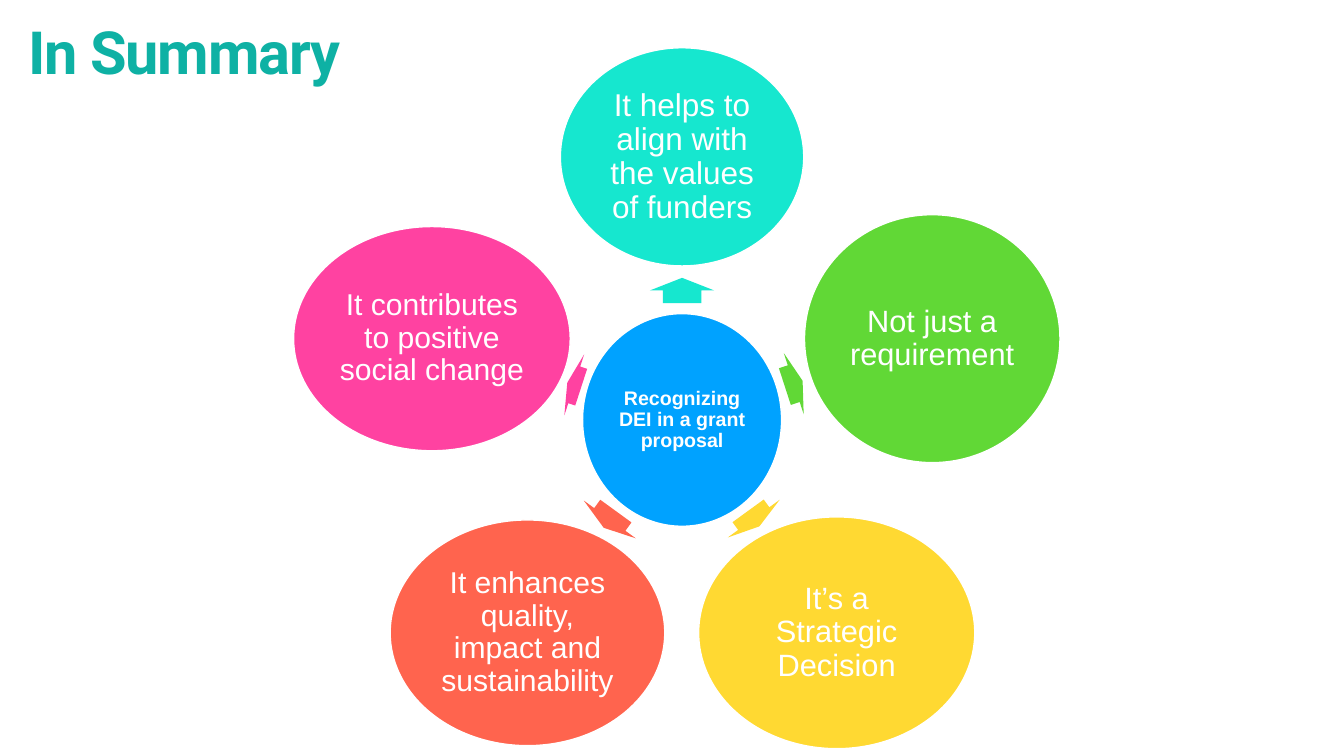
from dataclasses import dataclass
from math import cos, radians, sin

from pptx import Presentation
from pptx.dml.color import RGBColor
from pptx.enum.shapes import MSO_SHAPE
from pptx.enum.text import MSO_ANCHOR, PP_ALIGN
from pptx.util import Inches, Pt

OVAL, ARROW = MSO_SHAPE.OVAL, MSO_SHAPE.RIGHT_ARROW
TOP, MIDDLE = MSO_ANCHOR.TOP, MSO_ANCHOR.MIDDLE
LEFT, CENTER = PP_ALIGN.LEFT, PP_ALIGN.CENTER

SLIDE_WIDTH, SLIDE_HEIGHT = 26.67, 15
HUB_X, HUB_Y = 0.5075 * SLIDE_WIDTH, 0.5555 * SLIDE_HEIGHT
ORBIT = 0.348 * SLIDE_HEIGHT
ARROW_BREADTH = 0.085 * SLIDE_HEIGHT


@dataclass(frozen=True)
class Theme:
    title_font: str = "Roboto"
    body_font: str = "Arial"
    title_color: str = "0EB1A4"
    text_color: str = "FFFFFF"
    outline: str = "FFFFFF"
    hub: str = "00A2FF"
    turquoise: str = "16E7CF"
    green: str = "61D836"
    yellow: str = "FFD932"
    coral: str = "FF644E"
    pink: str = "FF42A1"
    title_size: int = 85
    hub_size: int = 28
    large: int = 45
    medium: int = 44
    small: int = 43


THEME = Theme()

# Clockwise from the top: text, color, type size, oval width and height,
# arrow length and arrow distance from the hub
REASONS = [
    ("It helps to align with the values of funders",
     THEME.turquoise, THEME.large, 4.83, 4.33, 0.5, 2.57),
    ("Not just a requirement",
     THEME.green, THEME.medium, 5.07, 4.92, 0.37, 2.33),
    ("It’s a Strategic Decision",
     THEME.yellow, THEME.medium, 5.48, 4.6, 0.38, 2.42),
    ("It enhances quality, impact and sustainability",
     THEME.coral, THEME.small, 5.45, 4.48, 0.41, 2.44),
    ("It contributes to positive social change",
     THEME.pink, THEME.small, 5.49, 4.45, 0.29, 2.25),
]


def polar(angle, distance):
    """Return the point at an angle and distance from the hub."""
    return (HUB_X + distance * cos(radians(angle)),
            HUB_Y + distance * sin(radians(angle)))


def write_text(shape, text, font, size, color, bold=False,
               align=CENTER, anchor=MIDDLE, spacing=0.9, margin=0.06):
    frame = shape.text_frame
    frame.text = text
    frame.word_wrap = True
    frame.vertical_anchor = anchor
    frame.margin_left = frame.margin_right = Inches(margin)
    frame.margin_top = frame.margin_bottom = Inches(margin)
    paragraph = frame.paragraphs[0]
    paragraph.alignment = align
    paragraph.line_spacing = spacing
    run = paragraph.runs[0]
    run.font.name = font
    run.font.size = Pt(size)
    run.font.bold = bold
    run.font.color.rgb = RGBColor.from_string(color)
    return run


def add_centered_shape(slide, kind, center, width, height, color):
    x, y = center
    shape = slide.shapes.add_shape(
        kind, Inches(x - width / 2), Inches(y - height / 2),
        Inches(width), Inches(height))
    shape.shadow.inherit = False
    shape.fill.solid()
    shape.fill.fore_color.rgb = RGBColor.from_string(color)
    shape.line.fill.background()
    return shape


def add_oval(slide, center, width, height, color, text, size,
             bold=False, margin=0.06):
    oval = add_centered_shape(slide, OVAL, center, width, height, color)
    oval.line.color.rgb = RGBColor.from_string(THEME.outline)
    oval.line.width = Pt(2)
    write_text(oval, text, THEME.body_font, size, THEME.text_color,
               bold=bold, margin=margin)


def add_arrow(slide, angle, distance, length, color):
    arrow = add_centered_shape(slide, ARROW, polar(angle, distance),
                               length, ARROW_BREADTH, color)
    arrow.adjustments[0] = 0.6
    arrow.adjustments[1] = 0.5
    arrow.rotation = angle % 360


def add_title(slide, text):
    title = slide.shapes.add_textbox(
        Inches(0.019 * SLIDE_WIDTH), Inches(0.034 * SLIDE_HEIGHT),
        Inches(0.901 * SLIDE_WIDTH), Inches(0.105 * SLIDE_HEIGHT))
    run = write_text(title, text, THEME.title_font, THEME.title_size,
                     THEME.title_color, bold=True, align=LEFT, anchor=TOP,
                     spacing=0.8)
    run.font._element.set("spc", "-170")


def main():
    presentation = Presentation()
    presentation.slide_width = Inches(SLIDE_WIDTH)
    presentation.slide_height = Inches(SLIDE_HEIGHT)
    slide = presentation.slides.add_slide(presentation.slide_layouts[6])

    add_title(slide, "In Summary")
    add_oval(slide, (HUB_X, HUB_Y), 3.95, 4.22, THEME.hub,
             "Recognizing DEI in a grant proposal", THEME.hub_size,
             bold=True, margin=0.04)
    for index, reason in enumerate(REASONS):
        text, color, size, width, height, length, distance = reason
        angle = index * 360 / len(REASONS) - 90
        add_arrow(slide, angle, distance, length, color)
        add_oval(slide, polar(angle, ORBIT), width, height, color, text, size)

    presentation.save("out.pptx")


if __name__ == "__main__":
    main()
